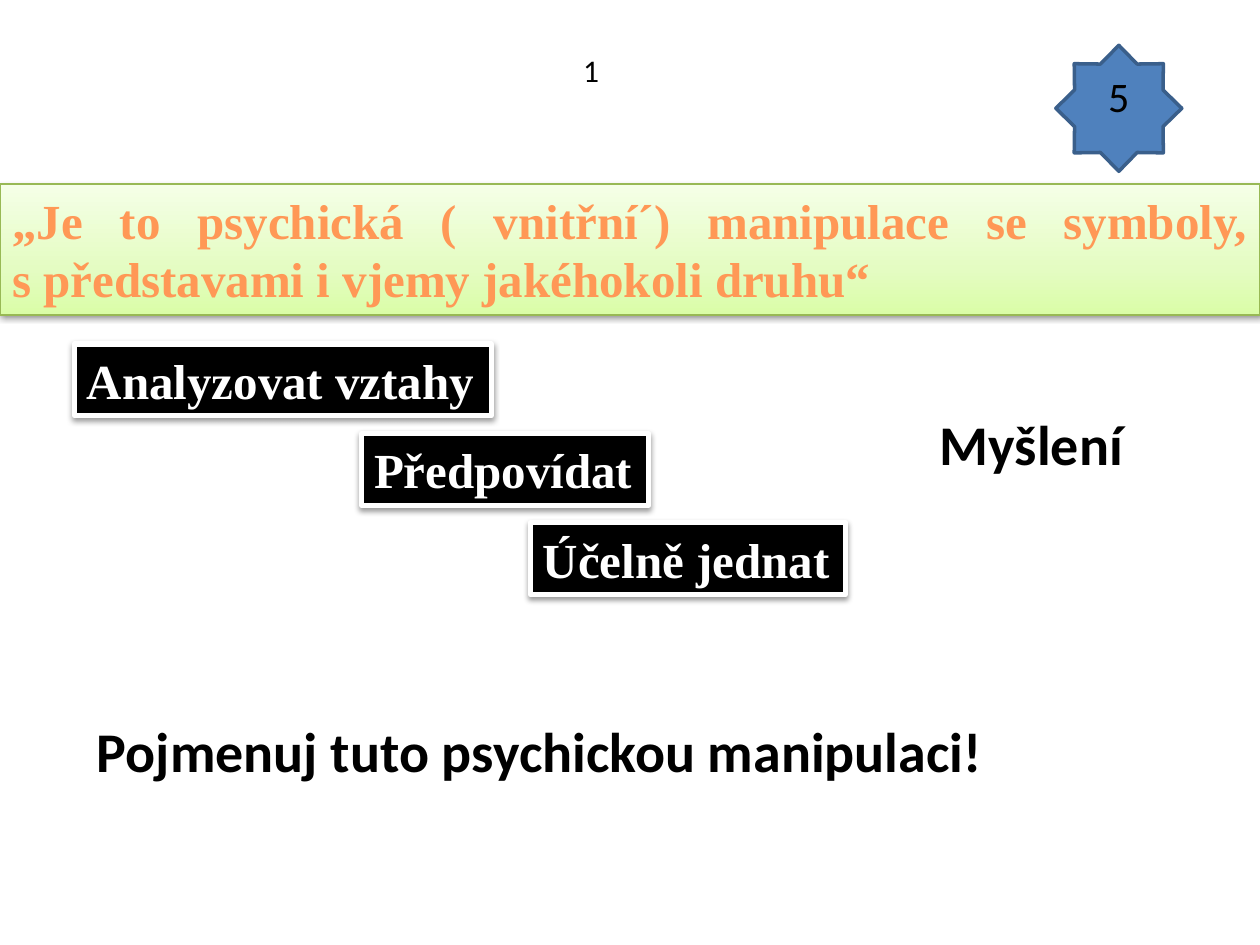
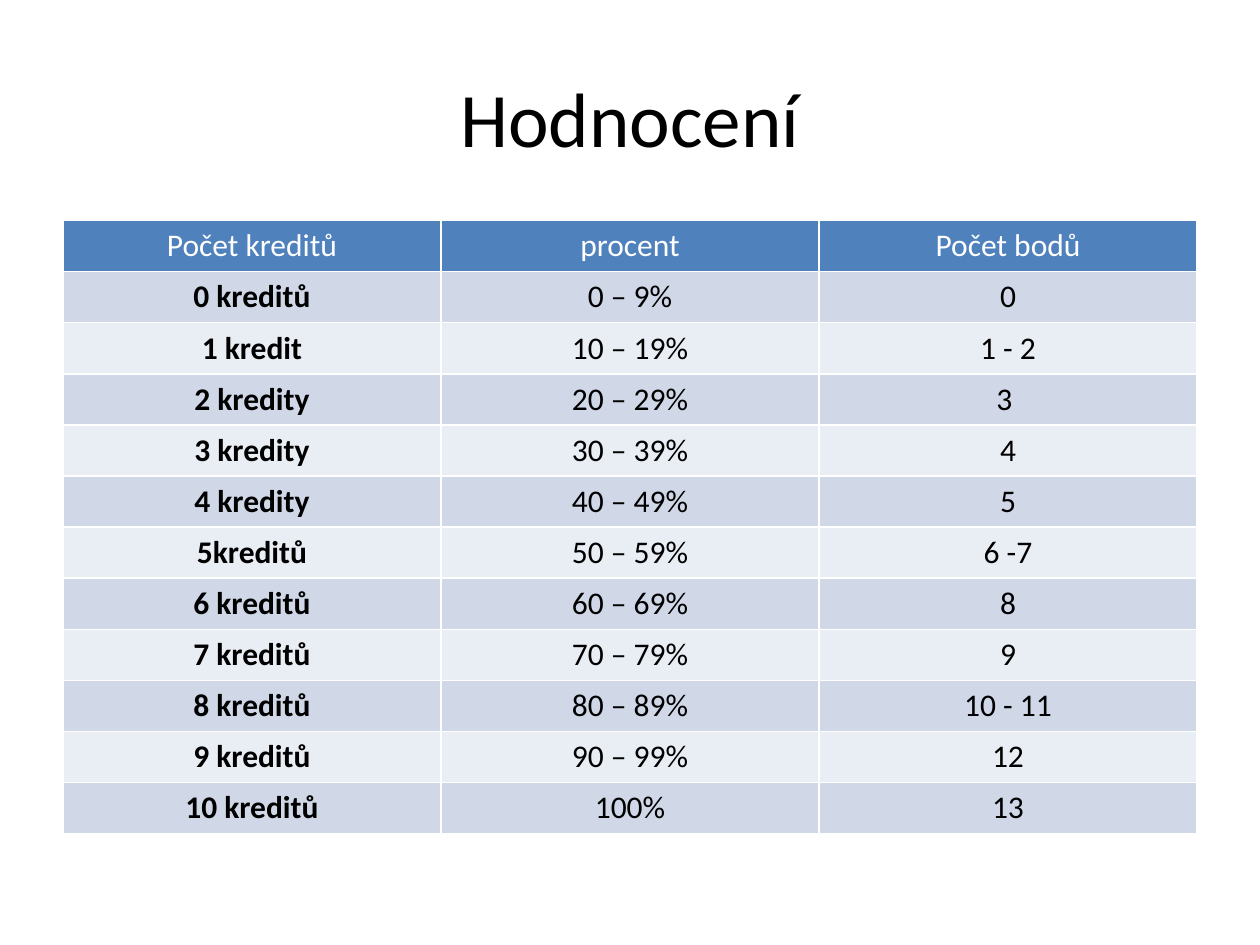
from lxml.etree import SubElement
from pptx import Presentation
from pptx.dml.color import RGBColor
from pptx.enum.shapes import MSO_SHAPE
from pptx.enum.text import MSO_ANCHOR, MSO_AUTO_SIZE, PP_ALIGN
from pptx.oxml.ns import qn
from pptx.util import Inches, Pt

# Shared colours and fonts
BLACK = RGBColor(0x00, 0x00, 0x00)
WHITE = RGBColor(0xFF, 0xFF, 0xFF)
BLUE = RGBColor(0x4F, 0x81, 0xBD)
DARK_BLUE = RGBColor(0x3A, 0x5F, 0x8B)
ROW_DARK = RGBColor(0xD0, 0xD8, 0xE8)
ROW_LIGHT = RGBColor(0xE9, 0xED, 0xF4)
ORANGE = RGBColor(0xFF, 0x98, 0x56)
GREEN_LINE = RGBColor(0x98, 0xB9, 0x55)
GREEN_STOPS = [
    (0, RGBColor(0xDA, 0xFD, 0xA7)),
    (35, RGBColor(0xE4, 0xFC, 0xC2)),
    (100, RGBColor(0xF5, 0xFF, 0xE7)),
]
SANS = "Calibri"
SERIF = "Times New Roman"
NBSP = chr(160)  # keeps a one-letter preposition with the next word

# Slide content
QUOTE = ("„Je to psychická ( vnitřní´) manipulace se symboly, "
         f"s{NBSP}představami i vjemy jakéhokoli druhu“")
STEPS = [
    ("Analyzovat vztahy", 0.59, 3.31),
    ("Předpovídat", 2.87, 2.28),
    ("Účelně jednat", 4.21, 2.5),
]
GRADES = [
    ("Počet kreditů", "procent", "Počet bodů"),
    ("0 kreditů", "0 – 9%", "0"),
    ("1 kredit", "10 – 19%", "1 - 2"),
    ("2 kredity", "20 – 29%", "3 "),
    ("3 kredity", "30 – 39%", "4"),
    ("4 kredity", "40 – 49%", "5"),
    ("5kreditů", "50 – 59%", "6 -7"),
    ("6 kreditů", "60 – 69%", "8"),
    ("7 kreditů", "70 – 79%", "9"),
    ("8 kreditů", "80 – 89%", "10 - 11"),
    ("9 kreditů", "90 – 99%", "12"),
    ("10 kreditů", "100%", "13"),
]


def set_text(frame, text, size, color=BLACK, font=SANS, bold=False, align=None):
    frame.text = text
    para = frame.paragraphs[0]
    para.alignment = align
    span = para.runs[0].font
    span.name, span.size, span.bold = font, Pt(size), bold
    span.color.rgb = color


def add_label(page, text, left, top, width, height, size, wrap=False, **style):
    box = page.shapes.add_textbox(
        Inches(left), Inches(top), Inches(width), Inches(height))
    set_text(box.text_frame, text, size, **style)
    box.text_frame.word_wrap = wrap
    box.text_frame.auto_size = MSO_AUTO_SIZE.SHAPE_TO_FIT_TEXT
    return box


def set_line(shape, color, width):
    shape.line.color.rgb = color
    shape.line.width = Pt(width)


def add_shadow(shape):
    effects = SubElement(shape.element.spPr, qn("a:effectLst"))
    shadow = SubElement(effects, qn("a:outerShdw"), blurRad="40000",
                        dist="20000", dir="5400000", rotWithShape="0")
    color = SubElement(shadow, qn("a:srgbClr"), val=str(BLACK))
    SubElement(color, qn("a:alpha"), val="38000")


def fill_gradient(shape, stops):
    shape.fill.gradient()
    shape.fill.gradient_angle = 90
    stop_list = shape.element.spPr.find(".//" + qn("a:gsLst"))
    stop_list.clear()
    for percent, color in stops:
        stop = SubElement(stop_list, qn("a:gs"), pos=str(percent * 1000))
        SubElement(stop, qn("a:srgbClr"), val=str(color))


def add_quote(page, text):
    box = add_label(page, text, 0, 1.46, 10, 1.04, 28, wrap=True, color=ORANGE,
                    font=SERIF, bold=True, align=PP_ALIGN.JUSTIFY)
    fill_gradient(box, GREEN_STOPS)
    set_line(box, GREEN_LINE, 0.75)
    add_shadow(box)


def add_step(page, text, left, top, width):
    box = add_label(page, text, left, top, width, 0.57, 28,
                    color=WHITE, font=SERIF, bold=True)
    box.fill.solid()
    box.fill.fore_color.rgb = BLACK
    set_line(box, WHITE, 3)
    add_shadow(box)


def add_star(page, text):
    star = page.shapes.add_shape(
        MSO_SHAPE.STAR_8_POINT, Inches(8.38), Inches(0.36), Inches(1), Inches(1))
    star.adjustments[0] = 0.38
    star.shadow.inherit = False
    star.fill.solid()
    star.fill.fore_color.rgb = BLUE
    set_line(star, DARK_BLUE, 2)
    star.text_frame.vertical_anchor = MSO_ANCHOR.TOP
    set_text(star.text_frame, text, 24, align=PP_ALIGN.CENTER)


def add_grade_table(page, rows):
    table = page.shapes.add_table(
        len(rows), len(rows[0]), Inches(0.5), Inches(1.75),
        Inches(9), Inches(4.87)).table
    for r, row in enumerate(rows):
        for c, text in enumerate(row):
            cell = table.cell(r, c)
            header = r == 0
            set_text(cell.text_frame, text, 18, WHITE if header else BLACK,
                     bold=c == 0 and not header, align=PP_ALIGN.CENTER)
            cell.fill.solid()
            band = ROW_DARK if r % 2 else ROW_LIGHT
            cell.fill.fore_color.rgb = BLUE if header else band


def build_question(deck):
    page = deck.slides.add_slide(deck.slide_layouts[6])
    add_quote(page, QUOTE)
    for i, (text, left, width) in enumerate(STEPS):
        add_step(page, text, left, 2.73 + 0.71 * i, width)
    add_label(page, "Pojmenuj tuto psychickou manipulaci!",
              0.67, 5.64, 7.29, 0.64, 32, bold=True)
    add_star(page, "5")
    add_label(page, "1", 4.53, 0.36, 0.33, 0.4, 18)
    add_label(page, "Myšlení", 7.36, 3.2, 1.67, 0.64, 32, bold=True)


def build_grading(deck):
    page = deck.slides.add_slide(deck.slide_layouts[5])
    title = page.shapes.title
    title.left, title.top = Inches(0.5), Inches(0.3)
    title.width, title.height = Inches(9), Inches(1.25)
    title.text_frame.vertical_anchor = MSO_ANCHOR.MIDDLE
    set_text(title.text_frame, "Hodnocení", 44, align=PP_ALIGN.CENTER)
    add_grade_table(page, GRADES)


def main():
    deck = Presentation()
    deck.slide_width, deck.slide_height = Inches(10), Inches(7.5)
    build_question(deck)
    build_grading(deck)
    deck.save("out.pptx")


if __name__ == "__main__":
    main()
